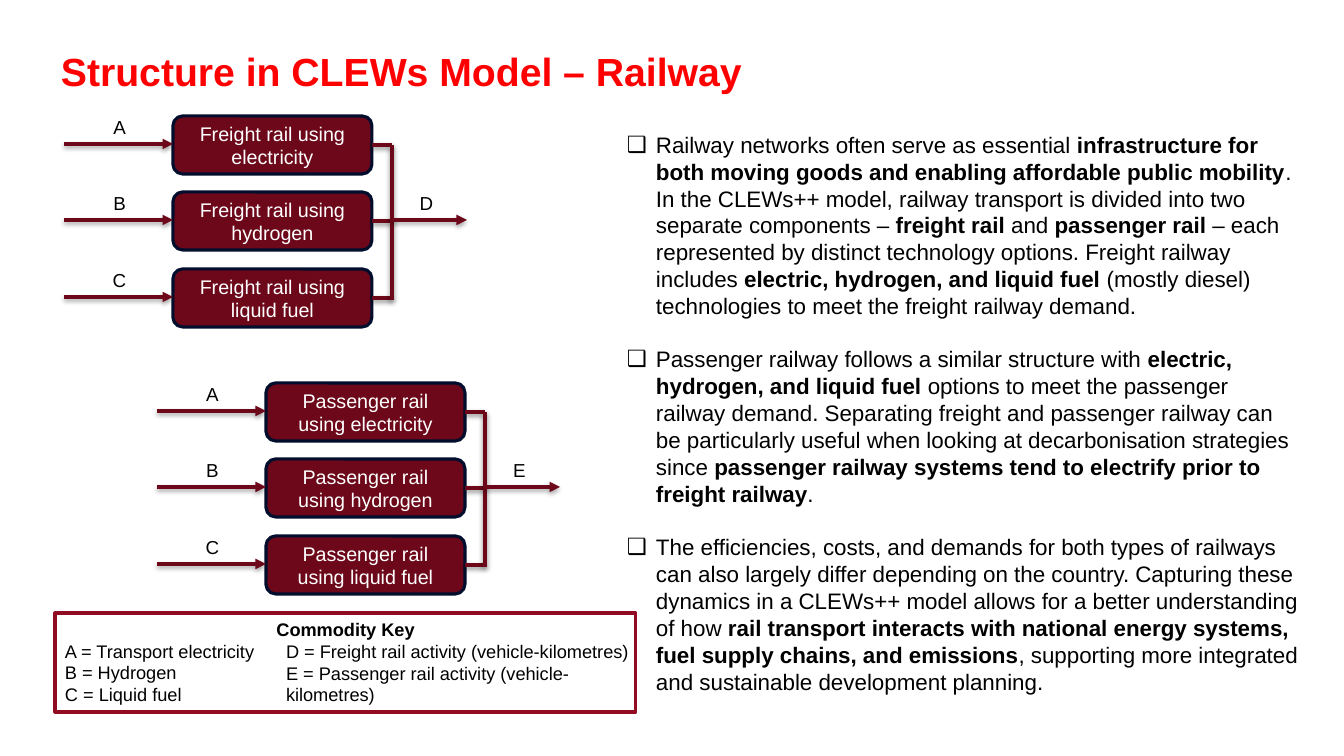
from dataclasses import dataclass

from lxml import etree
from pptx import Presentation
from pptx import util as u
from pptx.dml.color import RGBColor
from pptx.enum import shapes, text
from pptx.oxml import ns

SCALE = 914400 / 100.8
COLOURS = {
    "title": "FF0000",
    "text": "000000",
    "box": "6C0819",
    "box_edge": "000D2C",
    "box_text": "FFFFFF",
    "key_edge": "910C22",
}
FONT = "Arial"
TWO_ROWS = 153
FUELS = ("electricity", "hydrogen", "liquid fuel")
INPUTS = ("A", "B", "C")


@dataclass(frozen=True)
class Area:
    left: int
    top: int
    width: int
    height: int


@dataclass(frozen=True)
class Style:
    size: float
    colour: str = "text"
    bold: bool = False
    align: text.PP_ALIGN = text.PP_ALIGN.LEFT


@dataclass(frozen=True)
class Diagram:
    left: int
    top: int
    technology: str
    output: str


TITLE = Style(28, "title", True)
BODY = Style(16)
BOX = Style(14.1, "box_text", align=text.PP_ALIGN.CENTER)
LABEL = Style(13.4, align=text.PP_ALIGN.CENTER)
KEY_HEADING = Style(13, bold=True, align=text.PP_ALIGN.CENTER)
KEY = Style(13)

DIAGRAMS = (
    Diagram(173, 116, "Freight rail", "D"),
    Diagram(266, 383, "Passenger rail", "E"),
)

BULLETS = (
    (
        "Railway networks often serve as essential ",
        "infrastructure for both moving goods and enabling affordable public mobility",
        ". In the CLEWs++ model, railway transport is divided into two separate components – ",
        "freight rail ",
        "and ",
        "passenger rail",
        " – each represented by distinct technology options. Freight railway includes ",
        "electric, hydrogen, and liquid fuel ",
        "(mostly diesel) technologies to meet the freight railway demand.",
    ),
    (
        "Passenger railway follows a similar structure with ",
        "electric, hydrogen, and liquid fuel",
        " options to meet the passenger railway demand. Separating freight and passenger railway "
        "can be particularly useful when looking at decarbonisation strategies since ",
        "passenger railway systems tend to electrify prior to freight railway",
        ".",
    ),
    (
        "The efficiencies, costs, and demands for both types of railways can also largely differ "
        "depending on the country. Capturing these dynamics in a CLEWs++ model allows for a better "
        "understanding of how ",
        "rail transport interacts with national energy systems, fuel supply chains, and emissions",
        ", supporting more integrated and sustainable development planning.",
    ),
)


def px(length: int) -> u.Emu:
    return u.Emu(round(length * SCALE))


def colour(name: str) -> RGBColor:
    return RGBColor.from_string(COLOURS[name])


def place(area: Area) -> tuple:
    return px(area.left), px(area.top), px(area.width), px(area.height)


def set_frame(box, across: int, down: int, anchor=text.MSO_ANCHOR.TOP):
    frame = box.text_frame
    frame.word_wrap = True
    frame.vertical_anchor = anchor
    frame.margin_left = frame.margin_right = px(across)
    frame.margin_top = frame.margin_bottom = px(down)
    return frame


def set_font(para, style: Style) -> None:
    para.alignment = style.align
    para.font.name = FONT
    para.font.size = u.Pt(style.size)
    para.font.bold = style.bold
    para.font.color.rgb = colour(style.colour)


def write(frame, lines: tuple) -> None:
    for index, (words, style) in enumerate(lines):
        para = frame.add_paragraph() if index else frame.paragraphs[0]
        para.add_run().text = words
        set_font(para, style)


def add_text(page, area: Area, lines: tuple, across: int = 10, down: int = 5,
             anchor=text.MSO_ANCHOR.TOP):
    frame = set_frame(page.shapes.add_textbox(*place(area)), across, down, anchor)
    write(frame, lines)
    return frame


def add_box(page, area: Area, kind, edge: str, weight: float):
    box = page.shapes.add_shape(kind, *place(area))
    box.shadow.inherit = False
    box.line.color.rgb = colour(edge)
    box.line.width = u.Pt(weight)
    return box


def add_line(page, x1: int, y1: int, x2: int, y2: int, weight: float, arrow: bool = False) -> None:
    line = page.shapes.add_connector(
        shapes.MSO_CONNECTOR.STRAIGHT, px(x1), px(y1), px(x2), px(y2))
    line.line.color.rgb = colour("box")
    line.line.width = u.Pt(weight)
    if arrow:
        etree.SubElement(line.line._get_or_add_ln(), ns.qn("a:tailEnd"), type="triangle")
    effects = etree.SubElement(line._element.spPr, ns.qn("a:effectLst"))
    shadow = etree.SubElement(
        effects, ns.qn("a:outerShdw"), blurRad=str(u.Pt(3.5)), dist=str(u.Pt(1.8)),
        dir="5400000", rotWithShape="0")
    tint = etree.SubElement(shadow, ns.qn("a:srgbClr"), val=COLOURS["text"])
    etree.SubElement(tint, ns.qn("a:alpha"), val="37000")


def add_label(page, left: int, top: int, letter: str) -> None:
    add_text(page, Area(left, top, 81, 34), ((letter, LABEL),), 11, 6)


def add_diagram(page, diagram: Diagram) -> None:
    left, bus = diagram.left, diagram.left + 219
    for row, (fuel, letter) in enumerate(zip(FUELS, INPUTS)):
        top = diagram.top + row * TWO_ROWS // 2
        box = add_box(page, Area(left, top, 199, 58),
                      shapes.MSO_SHAPE.ROUNDED_RECTANGLE, "box_edge", 2.23)
        box.fill.solid()
        box.fill.fore_color.rgb = colour("box")
        frame = set_frame(box, 11, 6, text.MSO_ANCHOR.MIDDLE)
        write(frame, ((f"{diagram.technology} using {fuel}", BOX),))
        add_line(page, left - 109, top + 28, left, top + 28, 2.5, arrow=True)
        add_line(page, bus, top + 29, left + 199, top + 29, 3.35)
        add_label(page, left - 94, top - 6, letter)
    add_line(page, bus, diagram.top + 29, bus, diagram.top + 184, 3.35)
    add_line(page, bus, diagram.top + 104, bus + 75, diagram.top + 104, 2.5, arrow=True)
    add_label(page, left + 213, diagram.top + 70, diagram.output)


def add_bullets(page) -> None:
    frame = set_frame(page.shapes.add_textbox(*place(Area(617, 126, 696, 581))), 10, 5)
    for index, spans in enumerate(BULLETS):
        para = frame.add_paragraph() if index else frame.paragraphs[0]
        props = para._p.get_or_add_pPr()
        props.set("marL", str(px(29)))
        props.set("indent", str(-px(29)))
        tint = etree.SubElement(props, ns.qn("a:buClr"))
        etree.SubElement(tint, ns.qn("a:srgbClr"), val=COLOURS["text"])
        etree.SubElement(props, ns.qn("a:buFont"), typeface=FONT)
        etree.SubElement(props, ns.qn("a:buChar"), char="❑")
        if index:
            para.space_before = u.Pt(19)
        set_font(para, BODY)
        for position, words in enumerate(spans):
            span = para.add_run()
            span.text = words
            span.font.bold = position % 2 == 1


def add_key(page) -> None:
    box = add_box(page, Area(55, 613, 581, 99), shapes.MSO_SHAPE.RECTANGLE, "key_edge", 2.25)
    box.fill.background()
    write(set_frame(box, 10, 5), (
        ("Commodity Key", KEY_HEADING),
        ("A = Transport electricity", KEY),
        ("B = Hydrogen", KEY),
        ("C = Liquid fuel", KEY),
    ))
    add_text(page, Area(276, 630, 370, 87), (
        ("D = Freight rail activity (vehicle-kilometres)", KEY),
        ("E = Passenger rail activity (vehicle-kilometres)", KEY),
    ), 10, 10)


def main() -> None:
    deck = Presentation()
    deck.slide_width, deck.slide_height = px(1344), px(756)
    page = deck.slides.add_slide(deck.slide_layouts[6])
    title = add_text(page, Area(51, 0, 1280, 100), (("Structure in CLEWs Model – Railway", TITLE),),
                     anchor=text.MSO_ANCHOR.BOTTOM)
    title.paragraphs[0].line_spacing = 0.9
    add_bullets(page)
    for diagram in DIAGRAMS:
        add_diagram(page, diagram)
    add_key(page)
    deck.save("out.pptx")


if __name__ == "__main__":
    main()
